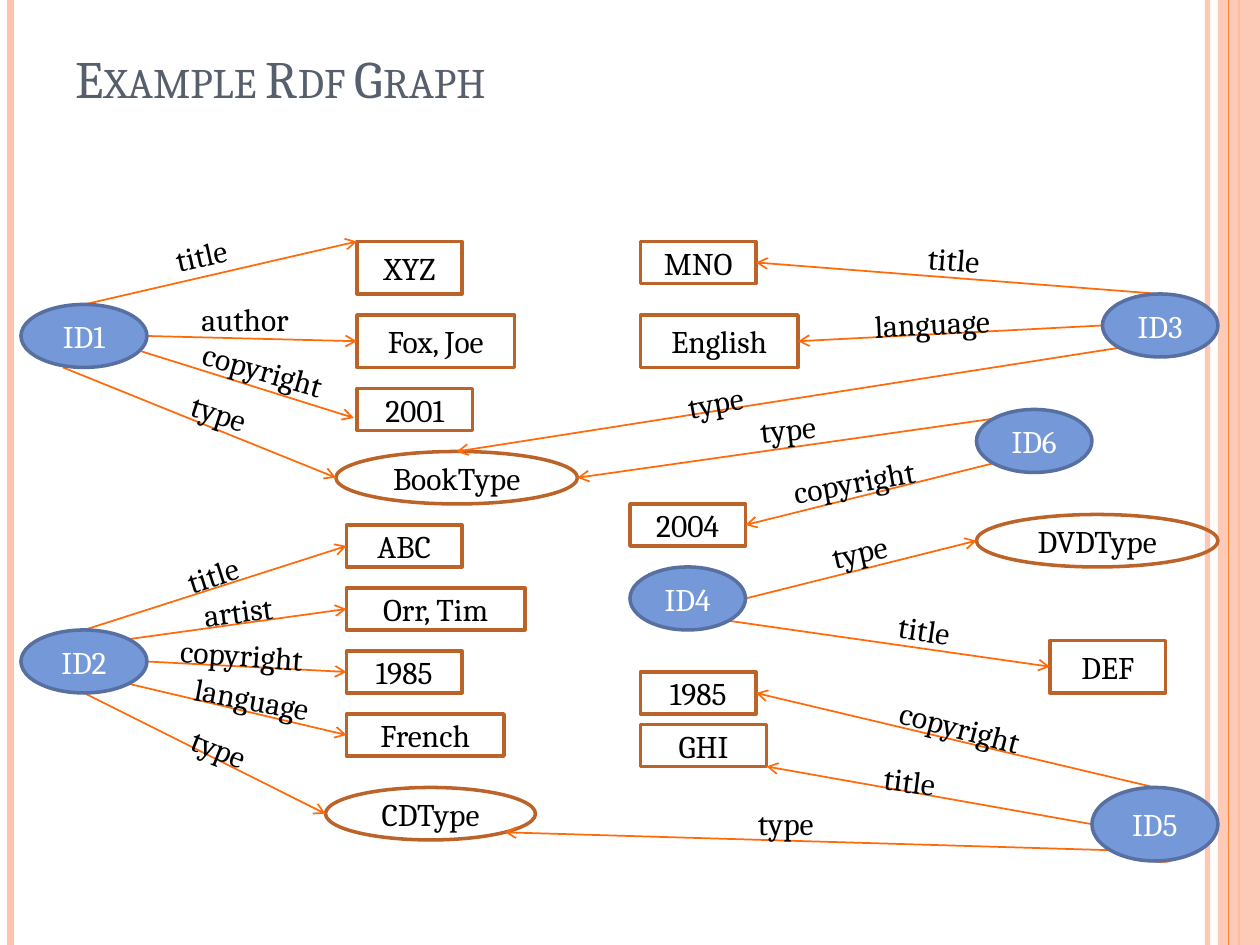
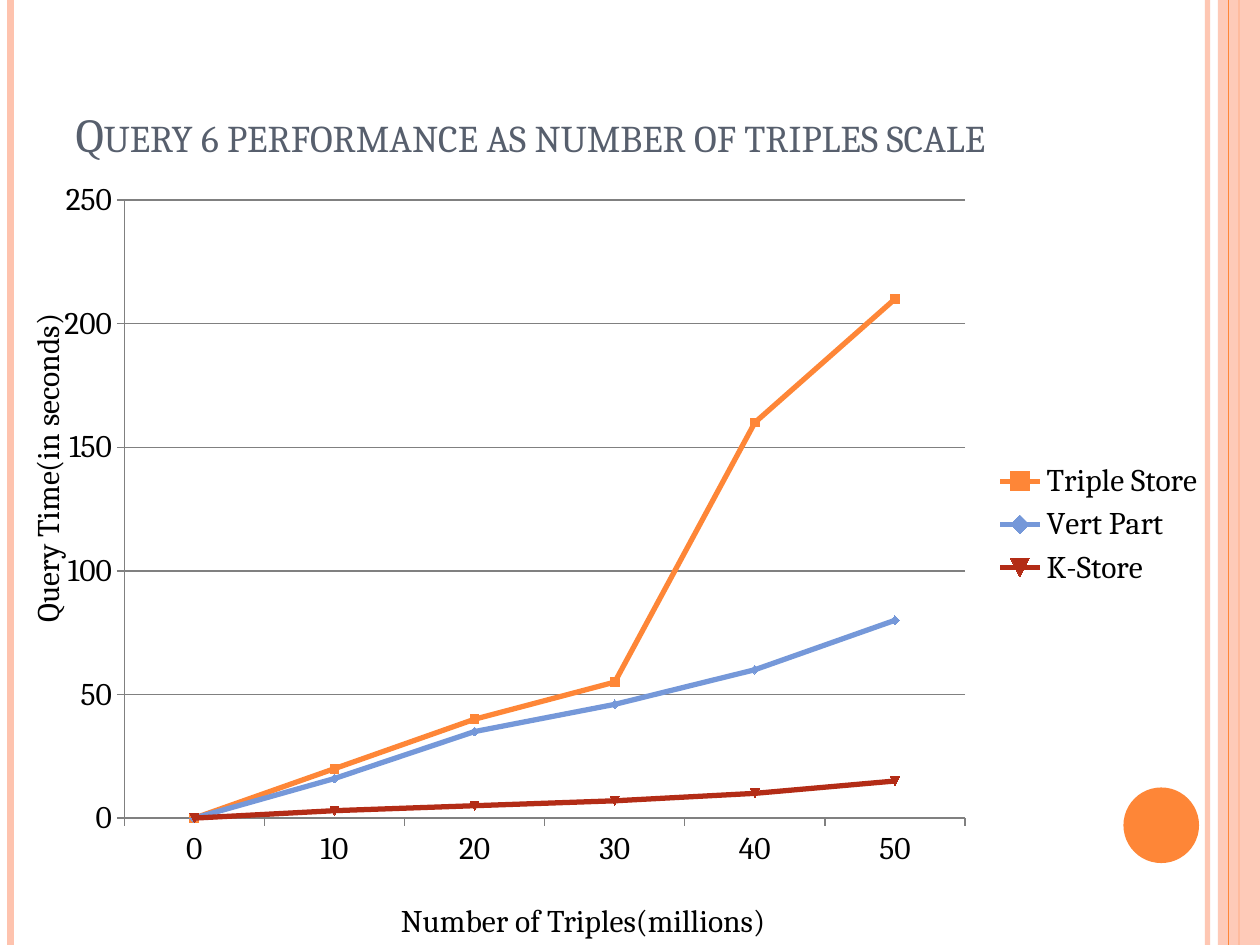
from dataclasses import dataclass

from lxml import etree
from pptx import Presentation
from pptx.chart.data import CategoryChartData
from pptx.dml.color import RGBColor
from pptx.enum.chart import XL_CHART_TYPE, XL_LEGEND_POSITION, XL_TICK_MARK
from pptx.enum.shapes import MSO_CONNECTOR, MSO_SHAPE
from pptx.enum.text import MSO_ANCHOR, MSO_AUTO_SIZE, PP_ALIGN
from pptx.oxml.ns import qn
from pptx.util import Pt

EMU_PER_PX = 7620  # 120 px to the inch
SLIDE_WIDTH, SLIDE_HEIGHT = 1200, 900
TITLE_ONLY = 5
RECTANGLE, ELLIPSE = MSO_SHAPE.RECTANGLE, MSO_SHAPE.OVAL
STRAIGHT = MSO_CONNECTOR.STRAIGHT
LEFT, CENTER = PP_ALIGN.LEFT, PP_ALIGN.CENTER
OUTSIDE = XL_TICK_MARK.OUTSIDE
LABEL_HEIGHT = 48


@dataclass(frozen=True)
class Theme:
    font: str = "Cambria"
    body_size: float = 18
    graph_title_size: float = 30
    chart_title_size: float = 27
    node_line_width: float = 2
    edge_width: float = 1
    series_width: float = 3
    text: str = "000000"
    inverse: str = "FFFFFF"
    title: str = "575F6D"
    accent: str = "FE8637"
    accent_light: str = "FEC3AE"
    edge: str = "FF6B0A"
    value_line: str = "BC6329"
    resource_fill: str = "7598D9"
    resource_line: str = "5770A1"
    axis: str = "808080"
    series: tuple = ("FE8637", "7598D9", "B32C16")


THEME = Theme()


@dataclass(frozen=True)
class Rule:
    x: int
    color: str
    width: float
    opacity: int = 100


@dataclass(frozen=True)
class Node:
    text: str
    left: int
    top: int
    width: int
    height: int
    kind: MSO_SHAPE = RECTANGLE


@dataclass(frozen=True)
class Edge:
    """An arrow; each anchor is a side, a corner or a point in px."""
    source: str
    source_anchor: str | tuple
    target: str
    target_anchor: str | tuple
    label: str
    label_left: int
    label_top: int
    angle: float = 0


RULES = (
    Rule(1150, THEME.accent_light, 3, 93),
    Rule(10, THEME.accent_light, 4.5),
    Rule(1180, THEME.accent, 1.5),
    Rule(1170, THEME.accent, 0.75),
)

VALUES = {
    "book title": Node("XYZ", 340, 230, 100, 50),
    "book author": Node("Fox, Joe", 340, 300, 150, 50),
    "book year": Node("2001", 340, 370, 110, 40),
    "cd title": Node("ABC", 330, 500, 110, 40),
    "cd artist": Node("Orr, Tim", 330, 560, 170, 40),
    "cd year": Node("1985", 330, 620, 110, 40),
    "cd language": Node("French", 330, 680, 150, 40),
    "CDType": Node("CDType", 310, 750, 200, 50, ELLIPSE),
    "ID3 title": Node("MNO", 610, 230, 110, 40),
    "ID3 language": Node("English", 610, 300, 150, 50),
    "ID6 year": Node("2004", 600, 480, 110, 40),
    "BookType": Node("BookType", 320, 430, 230, 50, ELLIPSE),
    "DVDType": Node("DVDType", 930, 490, 230, 50, ELLIPSE),
    "dvd title": Node("DEF", 1000, 610, 110, 50),
    "ID5 year": Node("1985", 610, 640, 110, 40),
    "ID5 title": Node("GHI", 610, 690, 120, 40),
}

RESOURCES = {
    "ID1": Node("ID1", 20, 290, 120, 60, ELLIPSE),
    "ID2": Node("ID2", 20, 600, 120, 60, ELLIPSE),
    "ID4": Node("ID4", 600, 540, 110, 60, ELLIPSE),
    "ID3": Node("ID3", 1050, 280, 110, 60, ELLIPSE),
    "ID6": Node("ID6", 930, 390, 110, 60, ELLIPSE),
    "ID5": Node("ID5", 1040, 750, 120, 70, ELLIPSE),
}

EDGES = (
    Edge("ID1", "top", "book title", "top left", "title", 155, 218, -12.6),
    Edge("ID1", "right", "book author", "left", "author", 180, 280),
    Edge("ID1", (120, 330), "book year", (337, 398), "copyright", 180, 330, 15.7),
    Edge("ID1", (60, 350), "BookType", "left", "type", 170, 370, 18.1),
    Edge("ID2", "top", "cd title", "left", "title", 166, 522, -17.9),
    Edge("ID2", "top right", "cd artist", "left", "artist", 182, 557, -7.6),
    Edge("ID2", "right", "cd year", "left", "copyright", 160, 600, 4.4),
    Edge("ID2", "bottom right", "cd language", "left", "language", 173, 643, 10.5),
    Edge("ID2", "bottom", "CDType", "left", "type", 170, 690, 21.7),
    Edge("ID3", "top", "ID3 title", "right", "title", 872, 223, 4.7),
    Edge("ID3", "left", "ID3 language", "right", "language", 821, 283, -2.7),
    Edge("ID3", "bottom left", "BookType", "top", "type", 643, 358, -10.1),
    Edge("ID6", "top left", "BookType", "right", "type", 712, 384, -5.6),
    Edge("ID6", "bottom left", "ID6 year", "right", "copyright", 743, 433, -10.1),
    Edge("ID4", "right", "DVDType", "left", "type", 780, 500, -12.4),
    Edge("ID4", "bottom right", "dvd title", "left", "title", 844, 576, 9),
    Edge("ID5", "top", "ID5 year", "right", "copyright", 844, 670, 14.7),
    Edge("ID5", "left", "ID5 title", "bottom right", "title", 830, 720, 7.4),
    Edge("ID5", "bottom left", "CDType", "bottom right", "type", 710, 760),
)

LABEL_WIDTHS = {"title": 82, "author": 119, "copyright": 156,
                "type": 85, "language": 152, "artist": 102}
RECTANGLE_SITES = {"top": 0, "left": 1, "bottom": 2, "right": 3}

TRIPLE_COUNTS = ("0", "10", "20", "30", "40", "50")
QUERY_TIMES = {
    "Triple Store": (0, 20, 40, 55, 160, 210),
    "Vert Part": (0, 16, 35, 46, 60, 80),
    "K-Store": (0, 3, 5, 7, 10, 15),
}
PLOT_AREA = {"x": 0.07, "y": 0.045, "w": 0.715, "h": 0.867}


def px(*lengths: float) -> list[int]:
    return [round(length * EMU_PER_PX) for length in lengths]


def rgb(color: str) -> RGBColor:
    return RGBColor.from_string(color)


def set_font(font, color: str, size: float = THEME.body_size) -> None:
    font.name, font.size = THEME.font, Pt(size)
    font.color.rgb = rgb(color)


def set_line(line, color: str, width: float) -> None:
    line.color.rgb = rgb(color)
    line.width = Pt(width)


def set_opacity(shape, percent: int) -> None:
    for color in shape._element.spPr.iter(qn("a:srgbClr")):
        etree.SubElement(color, qn("a:alpha")).set("val", str(percent * 1000))


def add_outline_shape(slide, kind, box: tuple, fill: str | None, line: str | None):
    shape = slide.shapes.add_shape(kind, *px(*box))
    shape.shadow.inherit = False
    if fill:
        shape.fill.solid()
        shape.fill.fore_color.rgb = rgb(fill)
    else:
        shape.fill.background()
    if line:
        set_line(shape.line, line, THEME.node_line_width)
    else:
        shape.line.fill.background()
    return shape


def add_line(slide, start: tuple, end: tuple, color: str, width: float):
    connector = slide.shapes.add_connector(STRAIGHT, *px(*start, *end))
    set_line(connector.line, color, width)
    etree.SubElement(connector._element.spPr, qn("a:effectLst"))
    return connector


def add_label(slide, text: str, left: int, top: int, width: int, angle: float) -> None:
    label = slide.shapes.add_textbox(*px(left, top, width, LABEL_HEIGHT))
    label.rotation = angle
    label.text_frame.text = text
    label.text_frame.word_wrap = False
    label.text_frame.auto_size = MSO_AUTO_SIZE.SHAPE_TO_FIT_TEXT
    set_font(label.text_frame.paragraphs[0].runs[0].font, THEME.text)


def add_node(slide, node: Node, fill: str | None, line: str, text_color: str):
    box = (node.left, node.top, node.width, node.height)
    shape = add_outline_shape(slide, node.kind, box, fill, line)
    shape.text_frame.text = node.text
    shape.text_frame.vertical_anchor = MSO_ANCHOR.MIDDLE
    paragraph = shape.text_frame.paragraphs[0]
    paragraph.alignment = CENTER
    set_font(paragraph.runs[0].font, text_color)
    return shape


def anchor_point(node: Node, anchor: str | tuple) -> tuple:
    """Corners of an ellipse lie on its outline, at 45 degrees."""
    if isinstance(anchor, tuple):
        return anchor
    across = ("right" in anchor) - ("left" in anchor)
    down = ("bottom" in anchor) - ("top" in anchor)
    reach = 0.5 ** 0.5 if node.kind == ELLIPSE and across and down else 1
    return (node.left + node.width * (1 + across * reach) / 2,
            node.top + node.height * (1 + down * reach) / 2)


def add_edge(slide, edge: Edge, target_shape) -> None:
    target = VALUES[edge.target]
    connector = add_line(slide, anchor_point(RESOURCES[edge.source], edge.source_anchor),
                         anchor_point(target, edge.target_anchor),
                         THEME.edge, THEME.edge_width)
    line = connector._element.spPr.find(qn("a:ln"))
    etree.SubElement(line, qn("a:tailEnd")).set("type", "arrow")
    if target.kind == RECTANGLE and edge.target_anchor in RECTANGLE_SITES:
        connector.end_connect(target_shape, RECTANGLE_SITES[edge.target_anchor])


def add_titled_slide(presentation, text: str, size: float, height: int):
    slide = presentation.slides.add_slide(presentation.slide_layouts[TITLE_ONLY])
    title = slide.shapes.title
    title.left, title.top, title.width, title.height = px(60, 36, 980, height)
    title.text_frame.text = text
    title.text_frame.auto_size = MSO_AUTO_SIZE.NONE
    title.text_frame.vertical_anchor = MSO_ANCHOR.BOTTOM
    paragraph = title.text_frame.paragraphs[0]
    paragraph.alignment = LEFT
    run = paragraph.runs[0]
    set_font(run.font, THEME.title, size)
    run._r.get_or_add_rPr().set("cap", "small")
    return slide


def decorate_layout(slide) -> None:
    """Draw the side bands on a slide, then move them to its layout."""
    decorations = []
    for rule in RULES:
        line = add_line(slide, (rule.x, 0), (rule.x, SLIDE_HEIGHT), rule.color, rule.width)
        if rule.opacity < 100:
            set_opacity(line, rule.opacity)
        decorations.append(line)
    band = add_outline_shape(slide, RECTANGLE, (1160, 0, 40, SLIDE_HEIGHT),
                             THEME.accent_light, None)
    set_opacity(band, 87)
    decorations.insert(-1, band)
    decorations.append(add_outline_shape(slide, ELLIPSE, (1070, 750, 72, 72),
                                         THEME.accent, None))
    for number, shape in enumerate(decorations, start=100):
        shape._element.find(".//" + qn("p:cNvPr")).set("id", str(number))
        slide.slide_layout.shapes._spTree.append(shape._element)


def draw_graph(slide) -> None:
    value_shapes = {name: add_node(slide, node, None, THEME.value_line, THEME.text)
                    for name, node in VALUES.items()}
    for edge in EDGES:
        add_edge(slide, edge, value_shapes[edge.target])
    for edge in EDGES:
        add_label(slide, edge.label, edge.label_left, edge.label_top,
                  LABEL_WIDTHS[edge.label], edge.angle)
    for node in RESOURCES.values():
        add_node(slide, node, THEME.resource_fill, THEME.resource_line, THEME.inverse)


def set_plot_area(chart) -> None:
    plot_area = chart._chartSpace.chart.plotArea
    layout = plot_area.find(qn("c:layout"))
    if layout is None:
        layout = etree.Element(qn("c:layout"))
        plot_area.insert(0, layout)
    manual = etree.SubElement(layout, qn("c:manualLayout"))
    settings = {"layoutTarget": "inner", "xMode": "edge", "yMode": "edge"} | PLOT_AREA
    for name, value in settings.items():
        etree.SubElement(manual, qn(f"c:{name}")).set("val", str(value))


def draw_query_chart(slide) -> None:
    data = CategoryChartData()
    data.categories = TRIPLE_COUNTS
    for name, times in QUERY_TIMES.items():
        data.add_series(name, times)
    chart = slide.shapes.add_chart(XL_CHART_TYPE.LINE_MARKERS,
                                   *px(40, 160, 1120, 679), data).chart
    set_font(chart.font, THEME.text)
    chart.has_title = False
    chart.has_legend = True
    chart.legend.position = XL_LEGEND_POSITION.RIGHT
    chart.legend.include_in_layout = False
    chart.plots[0].vary_by_categories = False
    for series, color in zip(chart.plots[0].series, THEME.series):
        series.smooth = False
        set_line(series.format.line, color, THEME.series_width)
    for axis in (chart.category_axis, chart.value_axis):
        axis.major_tick_mark = OUTSIDE
        set_line(axis.format.line, THEME.axis, 0.75)
    times = chart.value_axis
    times.minimum_scale, times.maximum_scale, times.major_unit = 0, 250, 50
    times.has_major_gridlines = True
    set_line(times.major_gridlines.format.line, THEME.axis, 0.75)
    set_plot_area(chart)
    add_label(slide, "Number of Triples(millions)", 370, 852, 414, 0)
    add_label(slide, "Query Time(in seconds)", -133, 403, 355, 270)


def main() -> None:
    presentation = Presentation()
    presentation.slide_width, presentation.slide_height = px(SLIDE_WIDTH, SLIDE_HEIGHT)
    graph_slide = add_titled_slide(presentation, "Example Rdf Graph",
                                   THEME.graph_title_size, 74)
    decorate_layout(graph_slide)
    draw_graph(graph_slide)
    chart_slide = add_titled_slide(presentation,
                                   "Query 6 performance as number of triples scale",
                                   THEME.chart_title_size, 124)
    draw_query_chart(chart_slide)
    presentation.save("out.pptx")


if __name__ == "__main__":
    main()
